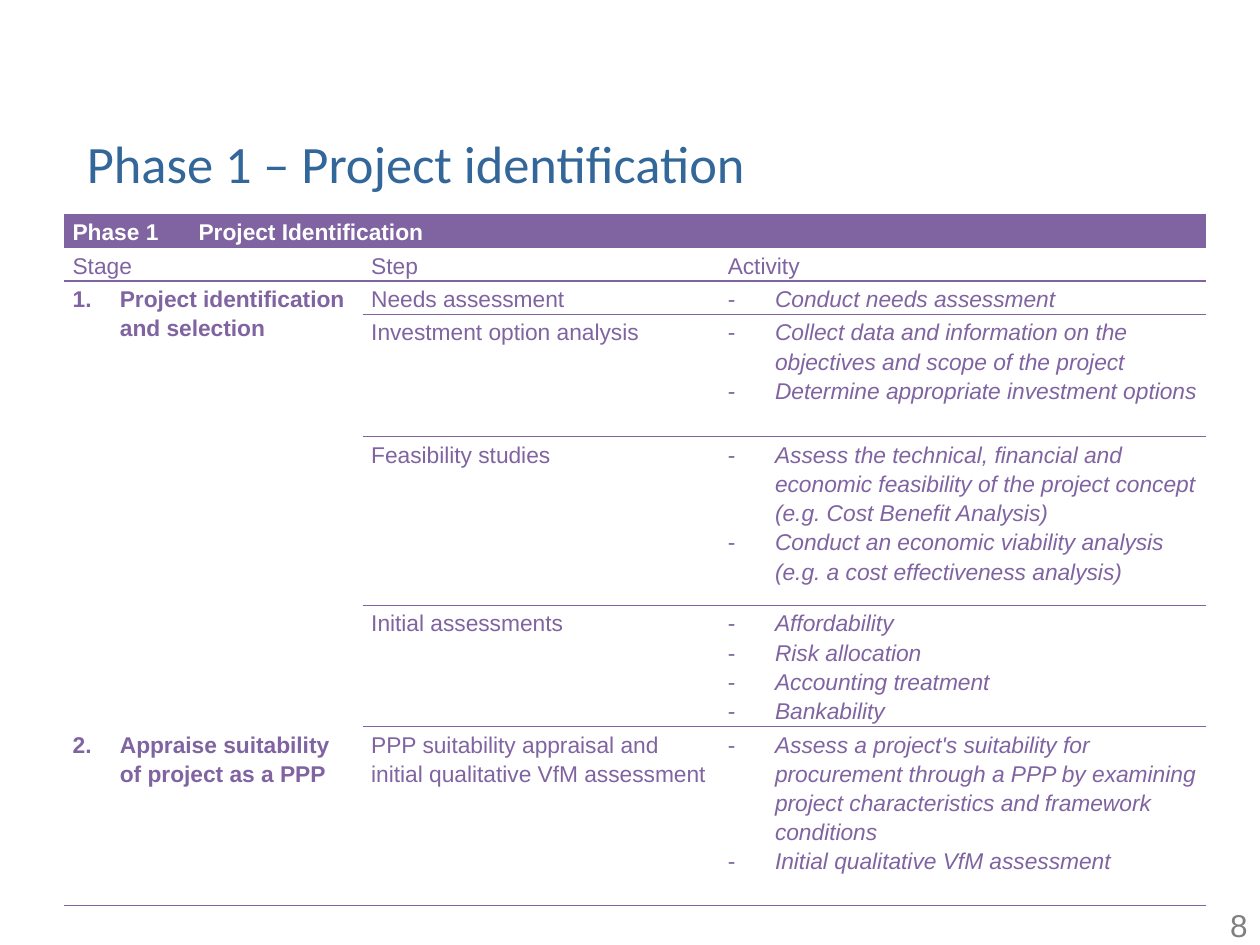
from dataclasses import dataclass

from lxml import etree
from pptx import Presentation
from pptx.dml.color import RGBColor
from pptx.enum.text import MSO_ANCHOR, PP_ALIGN
from pptx.oxml.ns import qn
from pptx.util import Inches, Pt

TOP = MSO_ANCHOR.TOP
LEFT, RIGHT, JUSTIFY = PP_ALIGN.LEFT, PP_ALIGN.RIGHT, PP_ALIGN.JUSTIFY
GRID_COLUMNS, GRID_ROWS = 1000, 750
UNIT = Inches(0.01)
PLAIN_TABLE_STYLE = "{2D5ABB26-0587-4C30-8999-92F81FD0307C}"


@dataclass(frozen=True)
class Style:
    size: float
    color: str
    font: str = "Arial"
    bold: bool = False
    italic: bool = False


@dataclass(frozen=True)
class Theme:
    purple: str = "8064A2"
    white: str = "FFFFFF"
    title: Style = Style(30, "336699", "Calibri")
    number: Style = Style(18, "808080")
    banner: Style = Style(13, "FFFFFF", bold=True)
    body: Style = Style(13, "8064A2")
    stage: Style = Style(13, "8064A2", bold=True)
    activity: Style = Style(13, "8064A2", italic=True)
    line_pitch: float = 16.7
    side_margin: float = 4.8
    edge_margin: float = 1.2
    indent: float = 27
    rule: float = 1


@dataclass(frozen=True)
class Area:
    column: float
    row: float
    width: float
    height: float

    def lengths(self) -> tuple:
        return tuple(int(value * UNIT) for value in
                     (self.column, self.row, self.width, self.height))


@dataclass(frozen=True)
class Step:
    name: str
    activities: tuple
    height: float
    stage: str = ""


THEME = Theme()
COLUMN_WIDTHS = (237, 283, 386)
HEADINGS = ("Stage", "Step", "Activity")
HEADING_HEIGHT = 25
STEPS = (
    Step("Needs assessment", ("Conduct needs assessment",), 23,
         "Project identification and selection"),
    Step("Investment option analysis",
         ("Collect data and information on the objectives and scope of the project",
          "Determine appropriate investment options"), 97),
    Step("Feasibility studies",
         ("Assess the technical, financial and economic feasibility of the project "
          "concept (e.g. Cost Benefit Analysis)",
          "Conduct an economic viability analysis (e.g. a cost effectiveness analysis)"),
         134),
    Step("Initial assessments",
         ("Affordability", "Risk allocation", "Accounting treatment", "Bankability"), 81),
    Step("PPP suitability appraisal and initial qualitative VfM assessment",
         ("Assess a project's suitability for procurement through a PPP by examining "
          "project characteristics and framework conditions",
          "Initial qualitative VfM assessment"), 142,
         "Appraise suitability of project as a PPP"),
)


def format_paragraph(para, style: Style, alignment) -> None:
    para.alignment = alignment
    for span in para.runs:
        font = span.font
        font.name, font.size = style.font, Pt(style.size)
        font.bold, font.italic = style.bold, style.italic
        font.color.rgb = RGBColor.from_string(style.color)


def add_text(page, area: Area, text: str, style: Style, alignment=LEFT) -> None:
    frame = page.shapes.add_textbox(*area.lengths()).text_frame
    frame.word_wrap = True
    frame.vertical_anchor = TOP
    frame.text = text
    format_paragraph(frame.paragraphs[0], style, alignment)


def add_bullet(para, number: int) -> None:
    properties = para._p.get_or_add_pPr()
    indent = Pt(THEME.indent)
    properties.set("marL", str(indent))
    properties.set("indent", str(-indent))
    color = etree.SubElement(properties, qn("a:buClr"))
    etree.SubElement(color, qn("a:srgbClr"), val=THEME.purple)
    etree.SubElement(properties, qn("a:buFont"), typeface="Arial")
    if number:
        etree.SubElement(properties, qn("a:buAutoNum"), type="arabicPeriod",
                         startAt=str(number))
    else:
        etree.SubElement(properties, qn("a:buChar"), char="-")


def fill_cell(cell, lines: tuple, style: Style, alignment=LEFT,
              bulleted: bool = False, number: int = 0) -> None:
    cell.margin_left = cell.margin_right = Pt(THEME.side_margin)
    cell.margin_top = cell.margin_bottom = Pt(THEME.edge_margin)
    frame = cell.text_frame
    for index, line in enumerate(lines):
        para = frame.add_paragraph() if index else frame.paragraphs[0]
        para.text = line
        if bulleted:
            add_bullet(para, number)
        para.line_spacing = Pt(THEME.line_pitch)
        format_paragraph(para, style, alignment)


def set_fill(cell, color: str) -> None:
    cell.fill.solid()
    cell.fill.fore_color.rgb = RGBColor.from_string(color)


def rule_below(cell) -> None:
    properties = cell._tc.get_or_add_tcPr()
    line = etree.Element(qn("a:lnB"), w=str(Pt(THEME.rule)))
    fill = etree.SubElement(line, qn("a:solidFill"))
    etree.SubElement(fill, qn("a:srgbClr"), val=THEME.purple)
    properties.insert(0, line)


def add_phase_table(page, column: float, row: float) -> None:
    heights = (HEADING_HEIGHT, HEADING_HEIGHT, *(step.height for step in STEPS))
    area = Area(column, row, sum(COLUMN_WIDTHS), sum(heights))
    holder = page.shapes.add_table(len(heights), len(COLUMN_WIDTHS), *area.lengths())
    table = holder.table
    table.first_row = table.horz_banding = False
    next(holder.element.iter(qn("a:tableStyleId"))).text = PLAIN_TABLE_STYLE
    for table_column, width in zip(table.columns, COLUMN_WIDTHS):
        table_column.width = int(width * UNIT)
    for table_row, height in zip(table.rows, heights):
        table_row.height = int(height * UNIT)

    banner = table.cell(0, 0)
    banner.merge(table.cell(0, len(COLUMN_WIDTHS) - 1))
    fill_cell(banner, ("Phase 1\tProject Identification",), THEME.banner, JUSTIFY)
    set_fill(banner, THEME.purple)
    for index, heading in enumerate(HEADINGS):
        cell = table.cell(1, index)
        fill_cell(cell, (heading,), THEME.body, JUSTIFY)
        set_fill(cell, THEME.white)
        rule_below(cell)

    last = len(heights) - 1
    table.cell(2, 0).merge(table.cell(last - 1, 0))
    stage_number = 0
    for index, step in enumerate(STEPS, start=2):
        stage, name, activity = (table.cell(index, place) for place in range(3))
        if step.stage:
            stage_number += 1
            fill_cell(stage, (step.stage,), THEME.stage, bulleted=True,
                      number=stage_number)
        fill_cell(name, (step.name,), THEME.body)
        fill_cell(activity, step.activities, THEME.activity, bulleted=True)
        for cell in (name, activity):
            rule_below(cell)
    rule_below(table.cell(last, 0))


def main() -> None:
    deck = Presentation()
    deck.slide_width, deck.slide_height = GRID_COLUMNS * UNIT, GRID_ROWS * UNIT
    page = deck.slides.add_slide(deck.slide_layouts[6])
    add_text(page, Area(767, 714, 233, 36), "8", THEME.number, RIGHT)
    add_text(page, Area(59, 99, 858, 79), "Phase 1 – Project identification", THEME.title)
    add_phase_table(page, 51, 170)
    deck.save("out.pptx")


if __name__ == "__main__":
    main()
